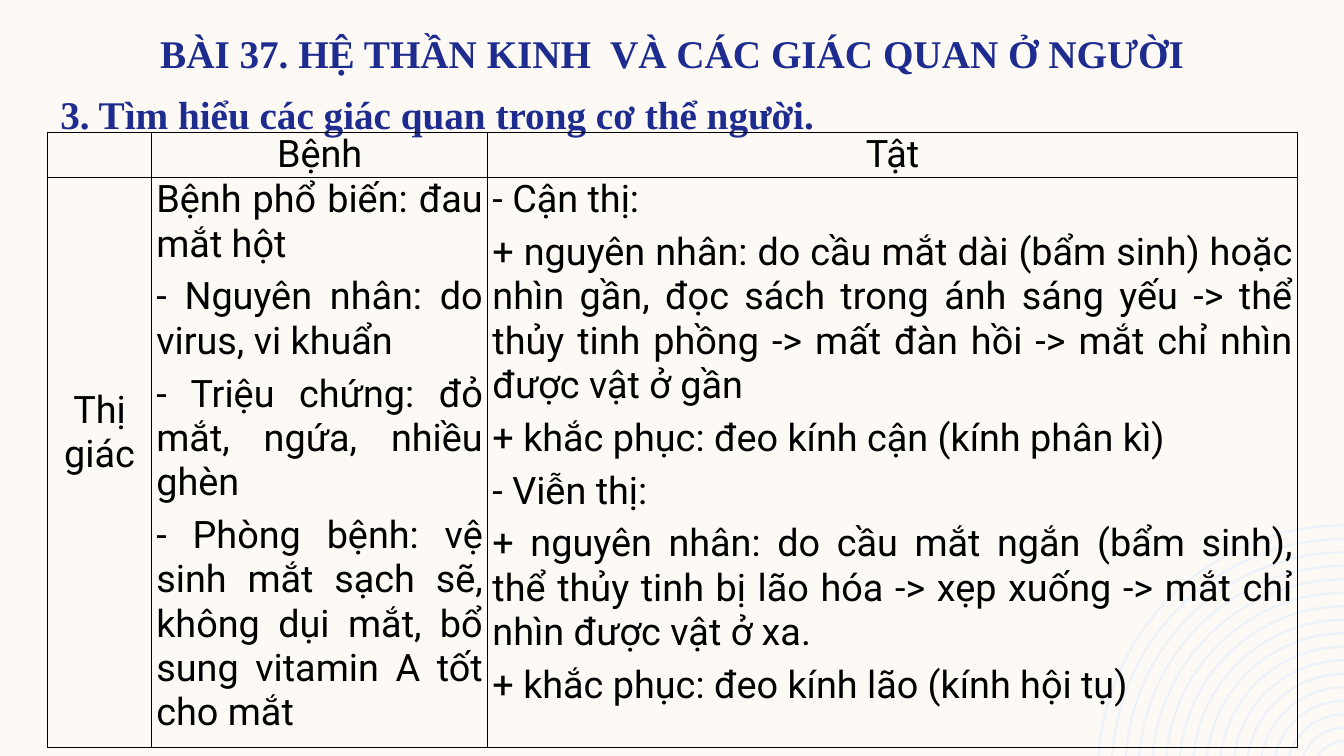
import math
from dataclasses import dataclass

from lxml import etree
from pptx import Presentation, util as u
from pptx.dml import color
from pptx.enum import text
from pptx.oxml import ns


@dataclass(frozen=True)
class Theme:
    paper: color.RGBColor = color.RGBColor.from_string("FDFAF6")
    ripple: color.RGBColor = color.RGBColor.from_string("EEF3FA")
    heading: color.RGBColor = color.RGBColor.from_string("1F2C8F")
    ink: color.RGBColor = color.RGBColor.from_string("000000")
    heading_font: str = "Times New Roman"
    body_font: str = "Roboto"
    heading_size: u.Pt = u.Pt(28)
    body_size: u.Pt = u.Pt(27)


theme = Theme()
CENTER, LEFT, JUSTIFY = text.PP_ALIGN.CENTER, text.PP_ALIGN.LEFT, text.PP_ALIGN.JUSTIFY


def write(paragraph, words, align, font, size, ink, bold=False):
    paragraph.alignment = align
    run = paragraph.add_run()
    run.text = words
    run.font.name = font
    run.font.size = size
    run.font.bold = bold
    run.font.color.rgb = ink


def outline(cell):
    properties = cell._tc.get_or_add_tcPr()
    for side in ("a:lnL", "a:lnR", "a:lnT", "a:lnB"):
        line = etree.SubElement(properties, ns.qn(side), w=str(u.Pt(1)))
        fill = etree.SubElement(line, ns.qn("a:solidFill"))
        etree.SubElement(fill, ns.qn("a:srgbClr"), val=str(theme.ink))


deck = Presentation()
deck.slide_width, deck.slide_height = u.Cm(33.87), u.Cm(19.05)
slide = deck.slides.add_slide(deck.slide_layouts[6])
slide.background.fill.solid()
slide.background.fill.fore_color.rgb = theme.paper

center_x, center_y, bottom = 33.87, 19.43, 19.05
ripples = None
for ring in range(17):
    outer = 6.22 - 0.34 * ring
    band = []
    for radius, order in ((outer, 1), (outer - 0.06, -1)):
        start = math.asin((center_y - bottom) / radius)
        handle = radius * 4 / 3 * math.tan((math.pi / 2 - start) / 4)
        x, y = center_x - radius * math.cos(start), bottom
        top = center_y - radius
        arc = (
            (x, y),
            (x + handle * math.sin(start), y - handle * math.cos(start)),
            (center_x - handle, top),
            (center_x, top),
        )
        band += [(u.Cm(px), u.Cm(py)) for px, py in arc[::order]]
    if ripples is None:
        ripples = slide.shapes.build_freeform(*band[0])
    else:
        ripples.move_to(*band[0])
    ripples.add_line_segments(band[1:], close=True)
corner = ripples.convert_to_shape()
segments = list(corner._element.iter(ns.qn("a:lnTo")))
for first in range(0, len(segments), 7):
    for offset in (0, 4):
        handles = segments[first + offset:first + offset + 3]
        curve = etree.Element(ns.qn("a:cubicBezTo"))
        handles[0].addprevious(curve)
        for segment in handles:
            curve.append(segment[0])
            segment.getparent().remove(segment)
corner.shadow.inherit = False
corner.fill.solid()
corner.fill.fore_color.rgb = theme.ripple
corner.line.fill.background()

headings = (
    ("BÀI 37. HỆ THẦN KINH  VÀ CÁC GIÁC QUAN Ở NGƯỜI", 0, 0.2, 33.87, CENTER),
    ("3. Tìm hiểu các giác quan trong cơ thể người.", 1.27, 1.73, 31.32, LEFT),
)
for words, left, top, width, align in headings:
    frame = slide.shapes.add_textbox(u.Cm(left), u.Cm(top), u.Cm(width), u.Cm(1.65)).text_frame
    frame.word_wrap = True
    frame.margin_top, frame.margin_bottom = 0, u.Cm(0.13)
    frame.paragraphs[0].line_spacing = u.Pt(48.8)
    write(frame.paragraphs[0], words, align, theme.heading_font, theme.heading_size,
          theme.heading, True)

column_widths = (2.62, 8.47, 20.41)
row_heights = (1.14, 14.35)
diseases = (
    "Bệnh phổ biến: đau mắt hột",
    "- Nguyên nhân: do virus, vi khuẩn",
    "- Triệu chứng: đỏ mắt, ngứa, nhiều ghèn",
    "- Phòng bệnh: vệ sinh mắt sạch sẽ, không dụi mắt, bổ sung vitamin A tốt cho mắt",
)
defects = (
    "- Cận thị:",
    "+ nguyên nhân: do cầu mắt dài (bẩm sinh) hoặc nhìn gần, đọc sách trong ánh sáng yếu "
    "-> thể thủy tinh phồng -> mất đàn hồi -> mắt chỉ nhìn được vật ở gần",
    "+ khắc phục: đeo kính cận (kính phân kì)",
    "- Viễn thị:",
    "+ nguyên nhân: do cầu mắt ngắn (bẩm sinh), thể thủy tinh bị lão hóa -> xẹp xuống "
    "-> mắt chỉ nhìn được vật ở xa.",
    "+ khắc phục: đeo kính lão (kính hội tụ)",
)
contents = (
    (((), CENTER), (("Bệnh",), CENTER), (("Tật",), CENTER)),
    ((("Thị giác",), CENTER), (diseases, JUSTIFY), (defects, JUSTIFY)),
)
senses = slide.shapes.add_table(
    2, 3, u.Cm(1.2), u.Cm(3.33), u.Cm(sum(column_widths)), u.Cm(sum(row_heights))
).table
senses.first_row = senses.horz_banding = False
for column, width in zip(senses.columns, column_widths):
    column.width = u.Cm(width)
for row, height, entries in zip(senses.rows, row_heights, contents):
    row.height = u.Cm(height)
    for cell, (lines, align) in zip(row.cells, entries):
        outline(cell)
        cell.fill.background()
        cell.margin_left = cell.margin_right = u.Cm(0.12)
        cell.margin_top = cell.margin_bottom = 0
        for index, words in enumerate(lines):
            frame = cell.text_frame
            paragraph = frame.add_paragraph() if index else frame.paragraphs[0]
            paragraph.space_before = paragraph.space_after = u.Pt(3)
            write(paragraph, words, align, theme.body_font, theme.body_size, theme.ink)
senses.cell(1, 0).margin_top = u.Cm(5.3)

deck.save("out.pptx")
